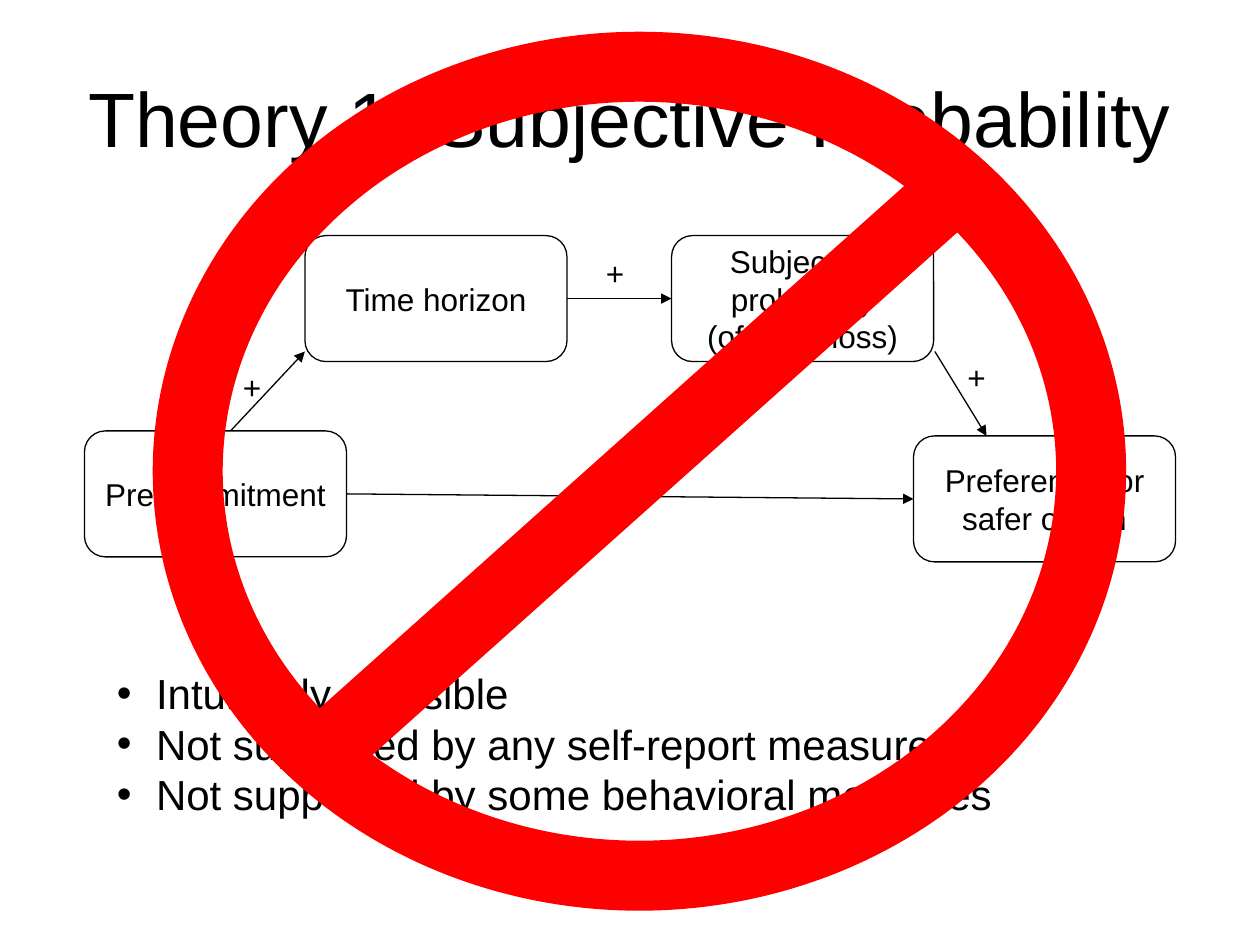
from pptx import Presentation
from pptx.dml.color import RGBColor
from pptx.enum.shapes import MSO_CONNECTOR, MSO_SHAPE
from pptx.enum.text import MSO_ANCHOR, MSO_AUTO_SIZE, PP_ALIGN
from pptx.oxml.ns import qn
from pptx.util import Pt
from lxml import etree

PX = 9144
STRAIGHT = MSO_CONNECTOR.STRAIGHT
ROUNDED = MSO_SHAPE.ROUNDED_RECTANGLE
OVAL = MSO_SHAPE.OVAL
MIDDLE = MSO_ANCHOR.MIDDLE
GROW = MSO_AUTO_SIZE.SHAPE_TO_FIT_TEXT
CENTER = PP_ALIGN.CENTER
LEFT = PP_ALIGN.LEFT
BLACK = "000000"
WHITE = "FFFFFF"
RED = "FF0000"


def style_text(frame, size, align):
    for paragraph in frame.paragraphs:
        paragraph.alignment = align
        for run in paragraph.runs:
            run.font.name = "Arial"
            run.font.size = Pt(size)
            run.font.color.rgb = RGBColor.from_string(BLACK)


def add_line(shapes, ends, color, width):
    line = shapes.add_connector(STRAIGHT, *[v * PX for v in ends])
    line.line.color.rgb = RGBColor.from_string(color)
    line.line.width = Pt(width)
    etree.SubElement(line._element.spPr, qn("a:effectLst"))
    return line


prs = Presentation()
prs.slide_width = 1000 * PX
prs.slide_height = 750 * PX
slide = prs.slides.add_slide(prs.slide_layouts[5])

title = slide.shapes.title
title.left, title.top, title.width, title.height = [v * PX for v in (50, 30, 900, 125)]
title.text_frame.text = "Theory 1: Subjective Probability"
title.text_frame.vertical_anchor = MIDDLE
style_text(title.text_frame, 44, CENTER)

factors = [
    (67, 342, "Precommitment"),
    (725, 346, "Preference for safer option"),
    (533, 187, "Subjective probability\n(of large loss)"),
    (242, 187, "Time horizon"),
]
for x, y, label in factors:
    factor = slide.shapes.add_shape(ROUNDED, x * PX, y * PX, 208 * PX, 100 * PX)
    factor.shadow.inherit = False
    factor.fill.solid()
    factor.fill.fore_color.rgb = RGBColor.from_string(WHITE)
    factor.line.color.rgb = RGBColor.from_string(BLACK)
    factor.line.width = Pt(0.75)
    factor.text_frame.text = label
    factor.text_frame.word_wrap = True
    factor.text_frame.vertical_anchor = MIDDLE
    style_text(factor.text_frame, 18, CENTER)

effects = [
    (275, 392, 725, 396),
    (183, 342, 242, 279),
    (450, 237, 533, 237),
    (742, 279, 783, 346),
]
for ends in effects:
    effect = add_line(slide.shapes, ends, BLACK, 0.75)
    etree.SubElement(effect.line._get_or_add_ln(), qn("a:tailEnd"), type="triangle")

for x, y in [(183, 287), (471, 353), (471, 197), (758, 279)]:
    sign = slide.shapes.add_textbox(x * PX, y * PX, 35 * PX, 40 * PX)
    sign.text_frame.text = "+"
    sign.text_frame.word_wrap = True
    sign.text_frame.auto_size = GROW
    style_text(sign.text_frame, 18, LEFT)

findings = slide.shapes.add_textbox(83 * PX, 525 * PX, 775 * PX, 131 * PX)
findings.text_frame.text = "\n".join([
    "Intuitively plausible",
    "Not supported by any self-report measures",
    "Not supported by some behavioral measures",
])
findings.text_frame.word_wrap = True
findings.text_frame.auto_size = GROW
style_text(findings.text_frame, 24, LEFT)
for finding in findings.text_frame.paragraphs:
    props = finding._p.get_or_add_pPr()
    props.set("marL", str(31 * PX))
    props.set("indent", str(-31 * PX))
    etree.SubElement(props, qn("a:buFont"), typeface="Arial")
    etree.SubElement(props, qn("a:buChar"), char="•")

rejection = slide.shapes.add_group_shape()
ring = rejection.shapes.add_shape(OVAL, 149 * PX, 53 * PX, 717 * PX, 642 * PX)
ring.shadow.inherit = False
ring.fill.background()
ring.line.color.rgb = RGBColor.from_string(RED)
ring.line.width = Pt(40)
add_line(rejection.shapes, (253, 600, 760, 147), RED, 40)

prs.save("out.pptx")
